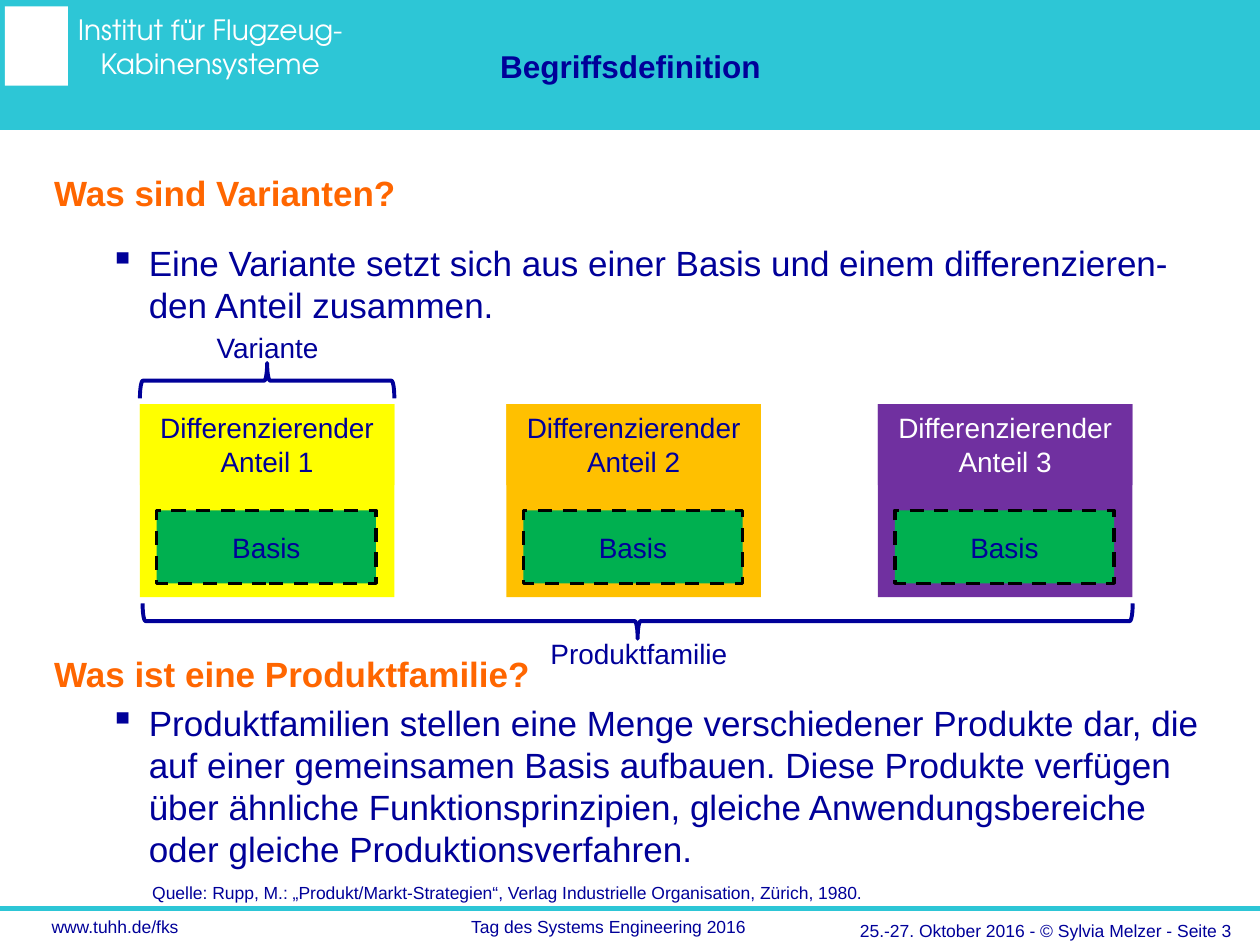
"""Build the slide that defines variants and product families."""
from dataclasses import dataclass
from typing import NamedTuple

from lxml import etree
from pptx import Presentation
from pptx.dml.color import RGBColor
from pptx.enum.dml import MSO_LINE
from pptx.enum.shapes import MSO_CONNECTOR, MSO_SHAPE
from pptx.enum.text import MSO_ANCHOR, PP_ALIGN
from pptx.oxml.ns import qn
from pptx.util import Cm, Pt

RECT, BRACE = MSO_SHAPE.RECTANGLE, MSO_SHAPE.LEFT_BRACE
LEFT, MID, RIGHT = PP_ALIGN.LEFT, PP_ALIGN.CENTER, PP_ALIGN.RIGHT
TOP, CENTER = MSO_ANCHOR.TOP, MSO_ANCHOR.MIDDLE
DASH = MSO_LINE.DASH
LINE = MSO_CONNECTOR.STRAIGHT


@dataclass(frozen=True)
class Theme:
    sans: str = "Arial"
    round: str = "TeX Gyre Adventor"
    cyan: str = "2DC6D6"
    navy: str = "000099"
    orange: str = "FF6600"
    white: str = "FFFFFF"
    black: str = "000000"
    green: str = "00B050"
    yellow: str = "FFFF00"
    amber: str = "FFC000"
    purple: str = "7030A0"
    small: int = 10
    label: int = 16
    title: int = 18
    body: int = 20


T = Theme()


class Box(NamedTuple):
    x: float
    y: float
    w: float
    h: float

    def place(self) -> tuple:
        return tuple(Cm(v) for v in self)


class Style(NamedTuple):
    size: int = T.label
    color: str = T.navy
    bold: bool = False
    font: str = T.sans
    align: PP_ALIGN = MID


class Card(NamedTuple):
    x: float
    fill: str
    ink: str
    text: str


class Item(NamedTuple):
    text: str
    head: bool
    before: float
    after: float


SMALL = Style(T.small, align=LEFT)
HEAD = Style(T.body, T.orange, True, align=LEFT)
POINT = Style(T.body, align=LEFT)

CARDS = [
    Card(2.82, T.yellow, T.navy, "Differenzierender Anteil 1"),
    Card(10.21, T.amber, T.navy, "Differenzierender Anteil 2"),
    Card(17.7, T.purple, T.white, "Differenzierender Anteil 3"),
]
ITEMS = [
    Item("Was sind Varianten?", True, 0, 12),
    Item("Eine Variante setzt sich aus einer Basis und einem "
         "differenzieren-den Anteil zusammen.", False, 4, 0),
    Item("Was ist eine Produktfamilie?", True, 187, 0),
    Item("Produktfamilien stellen eine Menge verschiedener Produkte dar, die "
         "auf einer gemeinsamen Basis aufbauen. Diese Produkte verfügen über "
         "ähnliche Funktionsprinzipien, gleiche Anwendungsbereiche oder "
         "gleiche Produktionsverfahren.", False, 4, 0),
]
NOTES = [
    (Box(0.79, 18.34, 4.95, 0.69), "www.tuhh.de/fks", SMALL),
    (Box(9.25, 18.34, 6.07, 0.69), "Tag des Systems Engineering 2016", SMALL),
    (Box(15.82, 18.42, 9.25, 0.61),
     "25.-27. Oktober 2016 - © Sylvia Melzer - Seite 3",
     Style(T.small, align=RIGHT)),
    (Box(1.04, 0.13, 6.4, 1.63), "Institut für Flugzeug-\vKabinensysteme",
     Style(color=T.white, font=T.round)),
    (Box(2.82, 17.65, 14.88, 0.69),
     "Quelle: Rupp, M.: „Produkt/Markt-Strategien“, Verlag Industrielle "
     "Organisation, Zürich, 1980.", SMALL),
    (Box(3.58, 6.53, 3.63, 0.94), "Variante", Style()),
    (Box(10.67, 12.7, 4.42, 0.94), "Produktfamilie", Style()),
]


def rgb(color: str) -> RGBColor:
    return RGBColor.from_string(color)


def dress(para, style: Style) -> None:
    para.alignment = style.align
    font = para.font
    font.name, font.size, font.bold = style.font, Pt(style.size), style.bold
    font.color.rgb = rgb(style.color)


def write(shape, text: str, style: Style, anchor=TOP) -> None:
    frame = shape.text_frame
    frame.word_wrap = True
    frame.vertical_anchor = anchor
    frame.text = text
    dress(frame.paragraphs[0], style)


def note(tree, box: Box, text: str, style: Style, anchor=TOP) -> None:
    write(tree.add_textbox(*box.place()), text, style, anchor)


def block(tree, box: Box, fill: str):
    shape = tree.add_shape(RECT, *box.place())
    shape.shadow.inherit = False
    shape.fill.solid()
    shape.fill.fore_color.rgb = rgb(fill)
    shape.line.fill.background()
    return shape


def brace(tree, box: Box, turn: int) -> None:
    shape = tree.add_shape(BRACE, *box.place())
    shape.shadow.inherit = False
    shape.fill.background()
    shape.line.color.rgb = rgb(T.navy)
    shape.line.width = Pt(2.25)
    shape.rotation = turn


def rule(tree, y: float, width: float) -> None:
    line = tree.add_connector(LINE, 0, Cm(y), Cm(width), Cm(y))
    line.line.color.rgb = rgb(T.cyan)
    line.line.width = Pt(3)
    etree.SubElement(line._element.spPr, qn("a:effectLst"))


def card(tree, data: Card) -> None:
    block(tree, Box(data.x, 8.15, 5.13, 3.89), data.fill)
    top = block(tree, Box(data.x, 8.15, 5.13, 1.63), data.fill)
    write(top, data.text, Style(color=data.ink))
    base = block(tree, Box(data.x + 0.34, 10.29, 4.42, 1.47), T.green)
    base.line.color.rgb = rgb(T.black)
    base.line.width = Pt(2)
    base.line.dash_style = DASH
    write(base, "Basis", Style(), CENTER)


def body(tree, box: Box, items: list[Item]) -> None:
    frame = tree.add_textbox(*box.place()).text_frame
    frame.word_wrap = True
    for i, item in enumerate(items):
        para = frame.add_paragraph() if i else frame.paragraphs[0]
        para.text = item.text
        props = para._p.get_or_add_pPr()
        props.set("marL", str(Cm(0.15 if item.head else 2.06)))
        if not item.head:
            props.set("indent", str(Cm(-0.79)))
            etree.SubElement(props, qn("a:buChar")).set("char", "▪")
        if item.before:
            para.space_before = Pt(item.before)
        para.space_after = Pt(item.after)
        dress(para, HEAD if item.head else POINT)


def main() -> None:
    deck = Presentation()
    deck.slide_width, deck.slide_height = Cm(25.4), Cm(19.05)
    tree = deck.slides.add_slide(deck.slide_layouts[6]).shapes
    rule(tree, 18.31, 25.4)
    block(tree, Box(0, 0, 25.4, 2.62), T.cyan)
    block(tree, Box(0.1, 0.13, 1.27, 1.6), T.white)
    note(tree, Box(6.55, 0, 12.32, 2.64), "Begriffsdefinition",
         Style(T.title, bold=True), CENTER)
    body(tree, Box(0.69, 3.33, 24, 14.4), ITEMS)
    for data in CARDS:
        card(tree, data)
    brace(tree, Box(5.03, 5.11, 0.71, 5.13), 90)
    brace(tree, Box(12.5, 2.54, 0.71, 19.96), 270)
    for box, text, style in NOTES:
        note(tree, box, text, style)
    deck.save("out.pptx")


if __name__ == "__main__":
    main()
